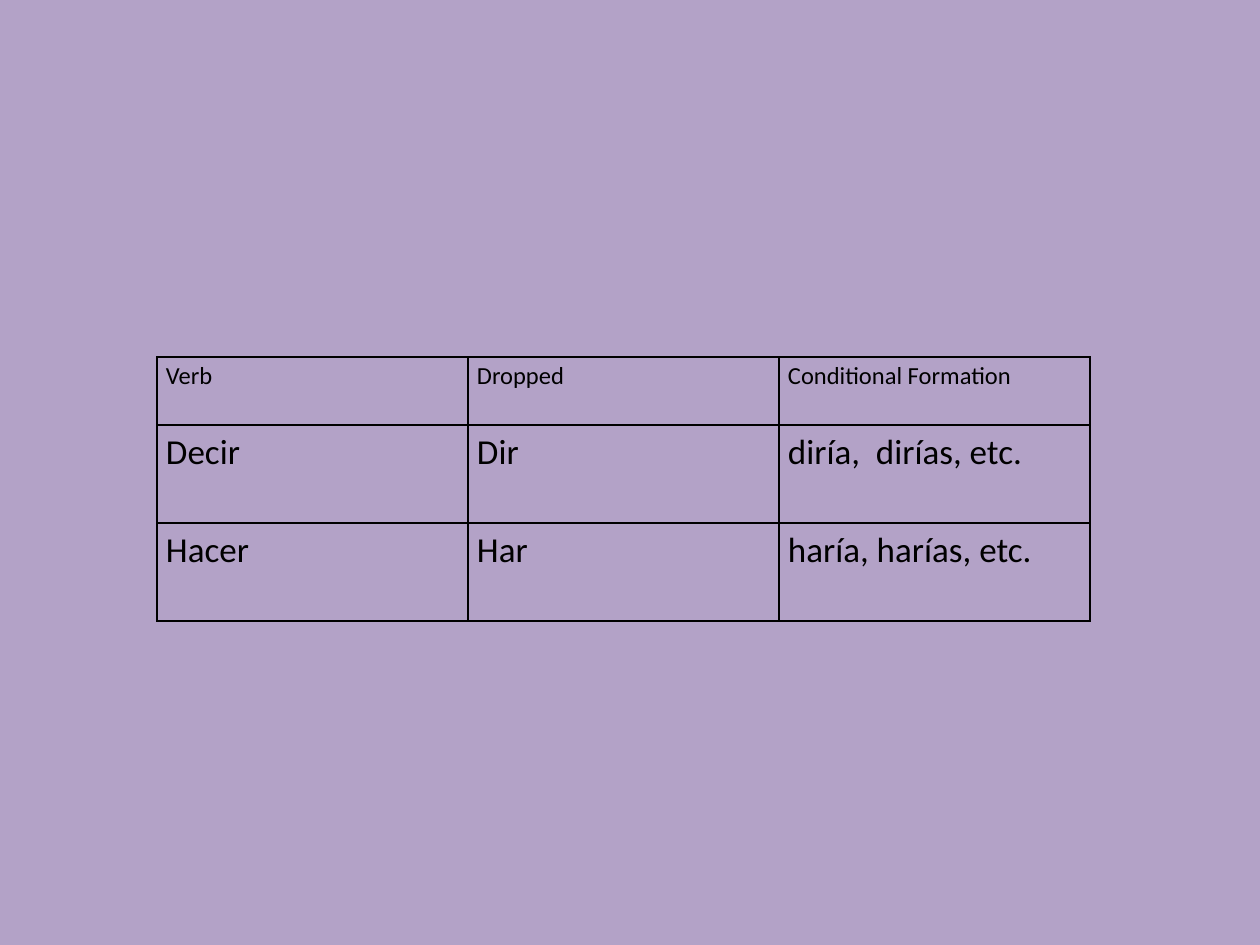
from dataclasses import dataclass

from lxml import etree
from pptx import Presentation
from pptx import util as u
from pptx.dml.color import RGBColor
from pptx.oxml.ns import qn


@dataclass(frozen=True)
class Theme:
    back: str = "B3A2C7"
    ink: str = "000000"
    font: str = "Calibri"
    head: int = 14
    body: int = 20


theme = Theme()
PX = u.Inches(1) // 126


def write(cell, words, size=theme.body, color=theme.ink, spacing=1.15):
    para = cell.text_frame.paragraphs[0]
    para.line_spacing = spacing
    run = para.add_run()
    run.text = words
    run.font.name = theme.font
    run.font.size = u.Pt(size)
    run.font.color.rgb = RGBColor.from_string(color)


def frame(cell, color=theme.ink, width=u.Pt(1)):
    """Draw a solid line on all four sides of the cell."""
    props = cell._tc.get_or_add_tcPr()
    for side in ("lnL", "lnR", "lnT", "lnB"):
        line = etree.SubElement(props, qn(f"a:{side}"), w=str(width))
        fill = etree.SubElement(line, qn("a:solidFill"))
        etree.SubElement(fill, qn("a:srgbClr"), val=color)


deck = Presentation()
deck.slide_width, deck.slide_height = 1260 * PX, 945 * PX
slide = deck.slides.add_slide(deck.slide_layouts[6])
slide.background.fill.solid()
slide.background.fill.fore_color.rgb = RGBColor.from_string(theme.back)

verbs = [
    ("Verb", "Dropped", "Conditional Formation"),
    ("Decir", "Dir", "diría,  dirías, etc."),
    ("Hacer", "Har", "haría, harías, etc."),
]
width = 311
heights = [68, 98, 98]
table = slide.shapes.add_table(
    len(verbs), 3, 157 * PX, 357 * PX, 3 * width * PX, sum(heights) * PX
).table
table.first_row = table.horz_banding = False

for col in table.columns:
    col.width = width * PX

for row, height, line in zip(table.rows, heights, verbs):
    row.height = height * PX
    size = theme.head if line is verbs[0] else theme.body
    for cell, words in zip(row.cells, line):
        cell.margin_left = cell.margin_right = 9 * PX
        cell.margin_top = cell.margin_bottom = 0
        write(cell, words, size=size)
        frame(cell)
        cell.fill.background()

deck.save("out.pptx")
